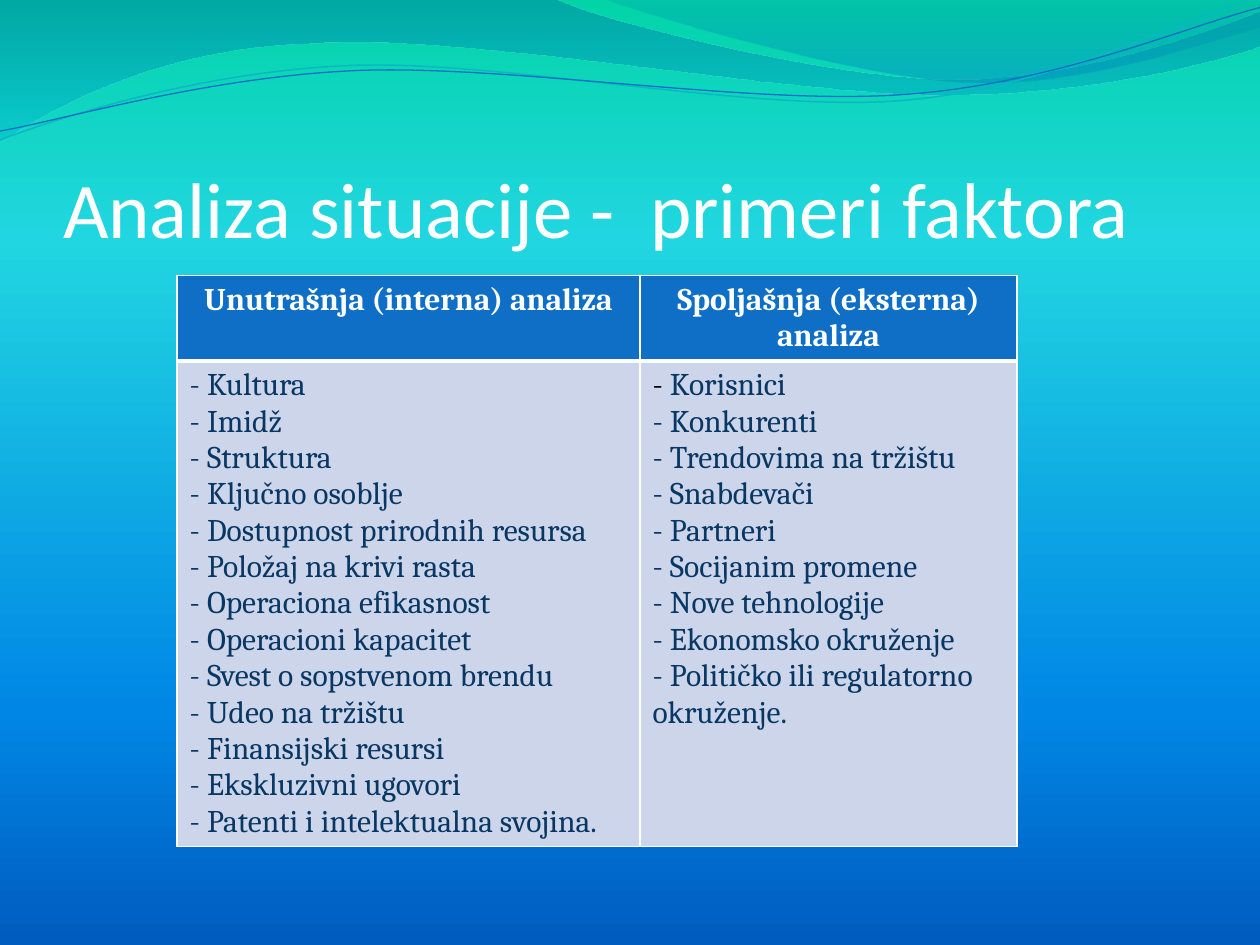
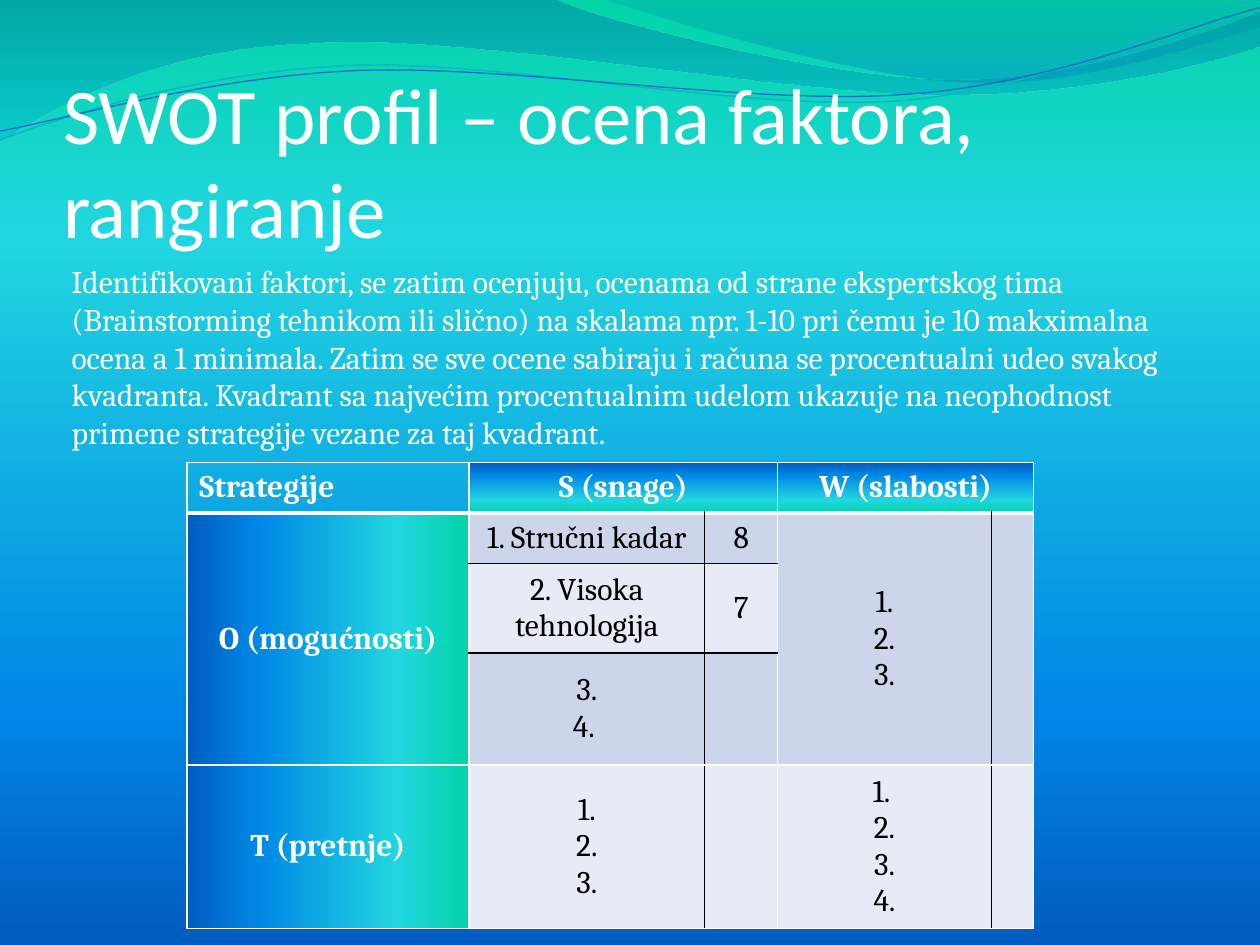
"""Build two slides on situation analysis and the SWOT profile."""
from dataclasses import dataclass
from math import cos, radians, sin
from typing import Any, Optional, Union

from lxml import etree
from pptx import Presentation
from pptx import util as u
from pptx.dml.color import RGBColor
from pptx.enum import text as t
from pptx.oxml import ns

COLUMNS, ROWS = 100, 75
UNIT = u.Inches(0.1)

WHITE = RGBColor(0xFF, 0xFF, 0xFF)
BLACK = RGBColor(0x00, 0x00, 0x00)
NAVY = RGBColor(0x08, 0x37, 0x63)
BLUE = RGBColor(0x0F, 0x6F, 0xC6)
TEAL = RGBColor(0x0A, 0xB8, 0xBF)
LILAC = RGBColor(0xCC, 0xD5, 0xEA)
PALE = RGBColor(0xE7, 0xEB, 0xF5)
MINT = RGBColor(0x03, 0xD4, 0xA8)
AQUA = RGBColor(0x21, 0xD6, 0xE0)
AZURE = RGBColor(0x00, 0x87, 0xE6)
OCEAN = RGBColor(0x00, 0x5C, 0xBF)
DEEP_TEAL = RGBColor(0x00, 0x74, 0xA1)
CYAN = RGBColor(0x00, 0xC6, 0xCF)
SEA = RGBColor(0x00, 0xA1, 0xA9)
STEEL = RGBColor(0x00, 0x8B, 0xBF)

TITLE_FONT, BODY_FONT = "Calibri", "Cambria"
TITLE_SIZE, BODY_SIZE = 45, 18
CENTER, LEFT = t.PP_ALIGN.CENTER, t.PP_ALIGN.LEFT
MIDDLE, TOP = t.MSO_ANCHOR.MIDDLE, t.MSO_ANCHOR.TOP


@dataclass(frozen=True)
class Gradient:
    """Linear gradient: (position, colour, opacity) stops in percent."""
    stops: tuple
    angle: int = 90


@dataclass(frozen=True)
class Box:
    """Place on the slide grid, in columns and rows."""
    left: float
    top: float
    width: float
    height: float


@dataclass(frozen=True)
class Wave:
    """Outline of straight (2 numbers) and Bezier (6 numbers) steps on the grid."""
    start: tuple
    steps: tuple
    fill: Optional[Gradient] = None
    line: Optional[RGBColor] = None
    weight: float = 0
    tilt: float = 0
    pivot: tuple = (0, 0)


@dataclass(frozen=True)
class Cell:
    """Table cell; dark lists the sides drawn in black."""
    row: int
    col: int
    lines: tuple = ()
    fill: Union[RGBColor, Gradient, None] = None
    color: RGBColor = BLACK
    bold: bool = False
    align: Any = CENTER
    anchor: Any = MIDDLE
    span: tuple = (1, 1)
    dark: str = ""


SKY_STOPS = ((0, MINT, 100), (25, AQUA, 100), (75, AZURE, 100), (100, OCEAN, 100))
SKY = Gradient(SKY_STOPS)
SKY_UP = Gradient(SKY_STOPS, 270)
SKY_LEFT = Gradient(SKY_STOPS, 180)

WAVES = (
    Wave((0, 0), ((44, -0.1), (47.6, 1.7, 66.4, 6.3, 75.8, 6.3),
                  (85.3, 6.3, 95.8, 2.6, 100, 0.9), (100.1, 3.6),
                  (98.3, 4.4, 87, 7.6, 74.6, 7.5), (62.2, 7.5, 38.2, 2.8, 25.7, 3.4),
                  (12.9, 3.6, 4.6, 8.3, -0.1, 11.3), (0, 0)),
         Gradient(((0, DEEP_TEAL, 45), (100, CYAN, 55)))),
    Wave((47.9, -0.1), ((50.9, 1.1, 68.2, 6.2, 76.9, 6.5),
                        (85.6, 6.9, 96.1, 3.2, 100, 2.1), (100, 0), (47.9, -0.1)),
         Gradient(((0, SEA, 30), (80, STEEL, 45)))),
    Wave((0, 11.1), ((4.8, 9.3, 15.8, 5.7, 27.7, 5.2), (39.5, 4.7, 59.3, 8.9, 71.3, 8),
                     (83.3, 7.1, 93.8, 1.5, 99.8, -0.2)),
         line=TEAL, weight=0.85, tilt=-2.7, pivot=(49.9, 5.75)),
    Wave((0, 10.4), ((4.7, 9.6, 16.4, 6.1, 28.3, 5.6), (40.3, 5.1, 59.7, 8.4, 71.7, 7.5),
                     (83.6, 6.7, 94.1, 2.1, 100, 0.6)),
         line=BLUE, weight=0.75, tilt=-2.7, pivot=(49.95, 5.9)),
)

INTERNAL = ("Kultura", "Imidž", "Struktura", "Ključno osoblje",
            "Dostupnost prirodnih resursa", "Položaj na krivi rasta",
            "Operaciona efikasnost", "Operacioni kapacitet",
            "Svest o sopstvenom brendu", "Udeo na tržištu", "Finansijski resursi",
            "Ekskluzivni ugovori", "Patenti i intelektualna svojina.")
EXTERNAL = ("Korisnici", "Konkurenti", "Trendovima na tržištu", "Snabdevači",
            "Partneri", "Socijanim promene", "Nove tehnologije",
            "Ekonomsko okruženje", "Političko ili regulatorno okruženje.")
SCORING = ("Identifikovani faktori, se zatim ocenjuju, ocenama od strane ekspertskog tima "
           "(Brainstorming tehnikom ili slično) na skalama npr. 1-10 pri čemu je 10 "
           "makximalna ocena a 1 minimala. Zatim se sve ocene sabiraju i računa se "
           "procentualni udeo svakog kvadranta. Kvadrant sa najvećim procentualnim udelom "
           "ukazuje na neophodnost primene strategije vezane za taj kvadrant.")

SWOT_CELLS = (
    Cell(0, 0, ("Strategije",), None, WHITE, True, LEFT, TOP),
    Cell(0, 1, ("S (snage)",), SKY_UP, WHITE, True, span=(1, 2)),
    Cell(0, 3, ("W (slabosti)",), SKY_UP, WHITE, True, span=(1, 2)),
    Cell(1, 0, ("O (mogućnosti)",), SKY_LEFT, WHITE, True, span=(3, 1)),
    Cell(1, 1, ("1. Stručni kadar",), LILAC, dark="RB"),
    Cell(1, 2, ("8",), LILAC, dark="LB"),
    Cell(1, 3, ("1.", "2.", "3."), LILAC, span=(3, 1), dark="R"),
    Cell(1, 4, (), LILAC, span=(3, 1), dark="L"),
    Cell(2, 1, ("2. Visoka tehnologija",), PALE, dark="RTB"),
    Cell(2, 2, ("7",), PALE, dark="LTB"),
    Cell(3, 1, ("3.", "4. "), LILAC, dark="RT"),
    Cell(3, 2, (), LILAC, dark="LT"),
    Cell(4, 0, ("T (pretnje)",), SKY_LEFT, WHITE, True),
    Cell(4, 1, ("1.", "2.", "3."), PALE, dark="R"),
    Cell(4, 2, (), PALE, dark="L"),
    Cell(4, 3, ("1. ", "2.", "3.", "4."), PALE, dark="R"),
    Cell(4, 4, (), PALE, dark="L"),
)


def grid(n: float) -> u.Emu:
    """Turn grid columns or rows into a length."""
    return u.Emu(round(n * UNIT))


def place(box: Box) -> tuple:
    """Return left, top, width and height of a box as lengths."""
    return tuple(grid(n) for n in (box.left, box.top, box.width, box.height))


def paint(fill: Any, parent: Any, look: Union[RGBColor, Gradient, None]) -> None:
    """Give a fill, held by an XML parent, a colour, a gradient or nothing."""
    if look is None:
        fill.background()
        return
    fill.solid()
    if isinstance(look, RGBColor):
        fill.fore_color.rgb = look
        return
    grad = etree.Element(ns.qn("a:gradFill"), rotWithShape="1")
    stops = etree.SubElement(grad, ns.qn("a:gsLst"))
    for position, color, opacity in look.stops:
        gs = etree.SubElement(stops, ns.qn("a:gs"), pos=str(position * 1000))
        rgb = etree.SubElement(gs, ns.qn("a:srgbClr"), val=str(color))
        if opacity < 100:
            etree.SubElement(rgb, ns.qn("a:alpha"), val=str(opacity * 1000))
    etree.SubElement(grad, ns.qn("a:lin"), ang=str(look.angle * 60000), scaled="0")
    parent.replace(parent.find(ns.qn("a:solidFill")), grad)


def style_run(r: Any, color: RGBColor, bold: bool = False,
              font: str = BODY_FONT, size: float = BODY_SIZE) -> None:
    """Set the font of one run."""
    r.font.name, r.font.size, r.font.bold = font, u.Pt(size), bold
    r.font.color.rgb = color


def untilt(wave: Wave, x: float, y: float) -> tuple:
    """Return a point as it lies before the wave is tilted."""
    (px, py), angle = wave.pivot, radians(-wave.tilt)
    dx, dy = x - px, y - py
    return (grid(px + dx * cos(angle) - dy * sin(angle)),
            grid(py + dx * sin(angle) + dy * cos(angle)))


def draw_wave(s: Any, wave: Wave) -> Any:
    """Draw a filled wave or a wave line and return its shape."""
    points = [untilt(wave, *step[i:i + 2])
              for step in (wave.start, *wave.steps) for i in range(0, len(step), 2)]
    builder = s.shapes.build_freeform(*points[0])
    builder.add_line_segments(points[1:], close=wave.fill is not None)
    sp = builder.convert_to_shape()
    segments = iter(list(sp.element.iter(ns.qn("a:lnTo"))))
    for step in wave.steps:
        parts = [next(segments) for _ in range(len(step) // 2)]
        if len(parts) == 3:
            curve = etree.Element(ns.qn("a:cubicBezTo"))
            parts[0].addprevious(curve)
            for part in parts:
                curve.append(part[0])
                part.getparent().remove(part)
    sp.rotation = wave.tilt
    sp.shadow.inherit = False
    paint(sp.fill, sp.element.spPr, wave.fill)
    if wave.line is None:
        sp.line.fill.background()
    else:
        sp.line.color.rgb = wave.line
        sp.line.width = u.Pt(wave.weight)
    return sp


def new_slide(prs: Any, title: str) -> Any:
    """Add a slide with a formatted title."""
    s = prs.slides.add_slide(prs.slide_layouts[5])
    sp = s.shapes.title
    sp.left, sp.top, sp.width, sp.height = place(Box(5, 7.7, 90, 12.5))
    tf = sp.text_frame
    tf.text = title
    tf.word_wrap, tf.auto_size = True, t.MSO_AUTO_SIZE.NONE
    tf.vertical_anchor = t.MSO_ANCHOR.BOTTOM
    tf.margin_left = tf.margin_right = tf.margin_bottom = 0
    tf.margin_top = grid(0.5)
    p = tf.paragraphs[0]
    p.alignment = LEFT
    style_run(p.runs[0], WHITE, font=TITLE_FONT, size=TITLE_SIZE)
    return s


def draw_borders(tc_pr: Any, row: int, dark: str) -> None:
    """Draw the four cell borders, thick below the header."""
    for i, side in enumerate("LRTB"):
        weight = 3 if (row, side) == (0, "B") else 1
        ln = etree.Element(ns.qn(f"a:ln{side}"), w=str(u.Pt(weight)))
        solid = etree.SubElement(ln, ns.qn("a:solidFill"))
        color = BLACK if side in dark else WHITE
        etree.SubElement(solid, ns.qn("a:srgbClr"), val=str(color))
        tc_pr.insert(i, ln)


def draw_table(s: Any, box: Box, widths: tuple, heights: tuple, cells: tuple) -> Any:
    """Add a table with the given cells and return it."""
    frame = s.shapes.add_table(len(heights), len(widths), *place(box))
    table = frame.table
    for column, width in zip(table.columns, widths):
        column.width = grid(width)
    for row, height in zip(table.rows, heights):
        row.height = grid(height)
    frame.height = grid(box.height)
    for item in cells:
        cell = table.cell(item.row, item.col)
        last_row, last_col = (item.row + item.span[0] - 1, item.col + item.span[1] - 1)
        if item.span != (1, 1):
            cell.merge(table.cell(last_row, last_col))
        for row in range(item.row, last_row + 1):
            for col in range(item.col, last_col + 1):
                part = table.cell(row, col)
                tc_pr = part._tc.get_or_add_tcPr()
                paint(part.fill, tc_pr, item.fill)
                draw_borders(tc_pr, row, item.dark)
        cell.vertical_anchor = item.anchor
        cell.text_frame.text = "\n".join(item.lines)
        for p in cell.text_frame.paragraphs:
            p.alignment = item.align
            for r in p.runs:
                style_run(r, item.color, item.bold)
    return table


def factors_slide(prs: Any) -> Any:
    """Build the slide listing internal and external factors."""
    s = new_slide(prs, "Analiza situacije -  primeri faktora")
    headings = ("Unutrašnja (interna) analiza", "Spoljašnja (eksterna) analiza")
    cells = []
    for col, (heading, factors) in enumerate(zip(headings, (INTERNAL, EXTERNAL))):
        cells.append(Cell(0, col, (heading,), BLUE, WHITE, True, anchor=TOP))
        lines = tuple(f"- {factor}" for factor in factors)
        cells.append(Cell(1, col, lines, LILAC, NAVY, align=LEFT, anchor=TOP))
    table = draw_table(s, Box(14.06, 21.88, 66.7, 47), (36.74, 29.93), (4.1, 4.1), cells)
    p = table.cell(1, 1).text_frame.paragraphs[0]
    p.text = "- "
    style_run(p.runs[0], BLACK)
    r = p.add_run()
    r.text = EXTERNAL[0]
    style_run(r, NAVY)
    return s


def swot_slide(prs: Any) -> None:
    """Build the slide with the SWOT scoring table."""
    s = new_slide(prs, "SWOT profil – ocena faktora, rangiranje")
    tf = s.shapes.add_textbox(*place(Box(4.7, 20.3, 89.1, 16.2))).text_frame
    tf.word_wrap, tf.auto_size = True, t.MSO_AUTO_SIZE.SHAPE_TO_FIT_TEXT
    tf.text = SCORING
    style_run(tf.paragraphs[0].runs[0], WHITE)
    draw_table(s, Box(14.83, 36.7, 67.2, 37), (22.4, 18.7, 5.8, 16.95, 3.35),
               (3.9, 3.7, 7.1, 8.9, 5.5), SWOT_CELLS)


def main() -> None:
    """Build and save the presentation."""
    prs = Presentation()
    prs.slide_width, prs.slide_height = grid(COLUMNS), grid(ROWS)
    master = prs.slide_master
    fill = master.background.fill
    fill.solid()
    paint(fill, master.element.find(f".//{ns.qn('p:bgPr')}"), SKY)
    s = factors_slide(prs)
    for number, wave in enumerate(WAVES, 20):
        sp = draw_wave(s, wave)
        sp.element.nvSpPr.cNvPr.set("id", str(number))
        master.shapes.element.append(sp.element)
    swot_slide(prs)
    prs.save("out.pptx")


if __name__ == "__main__":
    main()
